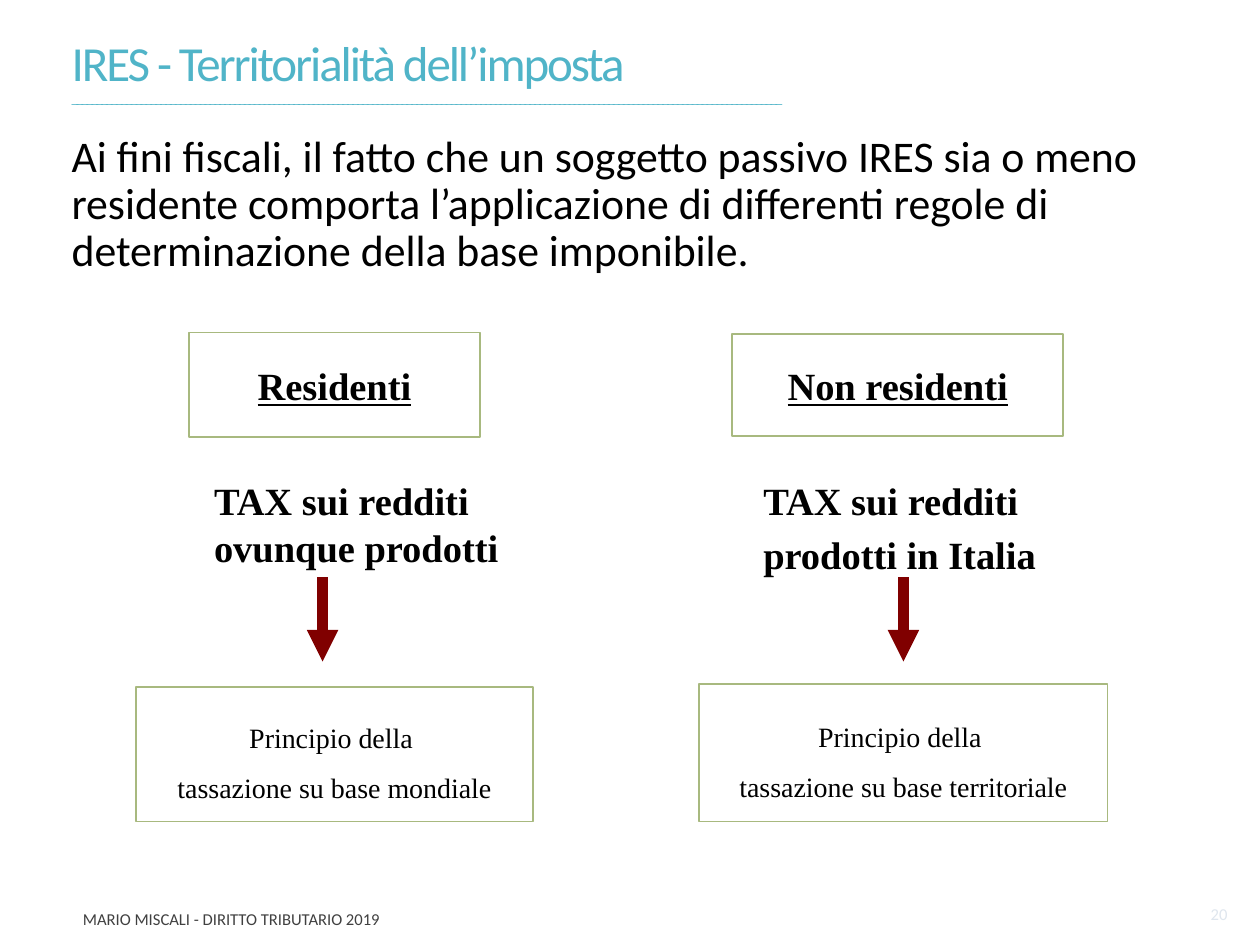
"""Build the slide on the territorial scope of the IRES tax."""
from dataclasses import dataclass

from lxml.etree import SubElement
from pptx import Presentation
from pptx.dml.color import RGBColor
from pptx.enum.shapes import MSO_CONNECTOR, MSO_SHAPE
from pptx.enum.text import MSO_ANCHOR, PP_ALIGN
from pptx.oxml.ns import qn
from pptx.slide import Slide
from pptx.text.text import TextFrame
from pptx.util import Inches, Pt


@dataclass(frozen=True)
class Theme:
    sans: str = "Calibri"
    serif: str = "Times New Roman"
    ink: str = "000000"
    accent: str = "50B4C8"
    paper: str = "FFFFFF"
    border: str = "A8B97F"
    arrow: str = "800000"
    footer: str = "404040"
    page: str = "DFE6EE"
    title_size: float = 28
    rule_size: float = 8
    body_size: float = 25
    heading_size: float = 22
    principle_size: float = 16
    footer_size: float = 9.5


@dataclass(frozen=True)
class Area:
    left: float
    top: float
    width: float
    height: float

    def emu(self) -> tuple:
        return tuple(map(Inches, (self.left, self.top, self.width, self.height)))


@dataclass(frozen=True)
class Style:
    font: str
    size: float
    color: str
    bold: bool = False
    underline: bool = False
    tracking: int = 0
    align: PP_ALIGN = PP_ALIGN.LEFT
    line_spacing: float = 1.0
    space_before: float = 0


@dataclass(frozen=True)
class Regime:
    name: str
    name_area: Area
    tax_lines: tuple
    tax_area: Area
    arrow_x: float
    principle: str
    principle_area: Area


THEME = Theme()
TITLE = Style(THEME.sans, THEME.title_size, THEME.accent, tracking=-120, line_spacing=0.9)
RULE = Style(THEME.sans, THEME.rule_size, THEME.accent, tracking=-120, line_spacing=0.9)
BODY = Style(THEME.sans, THEME.body_size, THEME.ink, line_spacing=0.9, space_before=5)
NAME = Style(THEME.serif, THEME.heading_size, THEME.ink, True, True, align=PP_ALIGN.CENTER)
TAX = Style(THEME.serif, THEME.heading_size, THEME.ink, True, space_before=4.4)
PRINCIPLE = Style(THEME.serif, THEME.principle_size, THEME.ink,
                  align=PP_ALIGN.CENTER, line_spacing=1.5)
FOOTER = Style(THEME.sans, THEME.footer_size, THEME.footer)
PAGE = Style(THEME.sans, THEME.footer_size, THEME.page, align=PP_ALIGN.RIGHT)

REGIMES = (
    Regime("Residenti", Area(1.5, 2.64, 2.31, 0.83),
           ("TAX sui redditi ovunque prodotti",), Area(1.6, 3.74, 2.49, 0.62), 2.56,
           "tassazione su base mondiale", Area(1.08, 5.45, 3.15, 1.07)),
    Regime("Non residenti", Area(5.81, 2.65, 2.63, 0.81),
           ("TAX sui redditi ", "prodotti in Italia"), Area(5.96, 3.74, 2.47, 0.91), 7.17,
           "tassazione su base territoriale", Area(5.55, 5.43, 3.24, 1.09)),
)


def add_run(paragraph, text: str, style: Style) -> None:
    run = paragraph.add_run()
    run.text = text
    run.font.name = style.font
    run.font.size = Pt(style.size)
    run.font.bold = style.bold
    run.font.underline = style.underline
    run.font.color.rgb = RGBColor.from_string(style.color)
    if style.tracking:
        run.font._element.set("spc", str(style.tracking))


def write(frame: TextFrame, lines: tuple, style: Style) -> None:
    for index, line in enumerate(lines):
        paragraph = frame.add_paragraph() if index else frame.paragraphs[0]
        paragraph.alignment = style.align
        paragraph.line_spacing = style.line_spacing
        paragraph.space_before = Pt(style.space_before)
        add_run(paragraph, line, style)


def add_text(slide: Slide, area: Area, lines: tuple, style: Style,
             anchor: MSO_ANCHOR = MSO_ANCHOR.TOP) -> TextFrame:
    frame = slide.shapes.add_textbox(*area.emu()).text_frame
    frame.word_wrap = True
    frame.vertical_anchor = anchor
    write(frame, lines, style)
    return frame


def add_box(slide: Slide, area: Area, lines: tuple, style: Style) -> None:
    box = slide.shapes.add_shape(MSO_SHAPE.RECTANGLE, *area.emu())
    box.shadow.inherit = False
    box.fill.solid()
    box.fill.fore_color.rgb = RGBColor.from_string(THEME.paper)
    box.line.color.rgb = RGBColor.from_string(THEME.border)
    box.line.width = Pt(1)
    box.text_frame.word_wrap = False
    box.text_frame.vertical_anchor = MSO_ANCHOR.MIDDLE
    write(box.text_frame, lines, style)


def add_down_arrow(slide: Slide, x: float, top: float = 4.58, bottom: float = 5.25) -> None:
    arrow = slide.shapes.add_connector(
        MSO_CONNECTOR.STRAIGHT, Inches(x), Inches(top), Inches(x), Inches(bottom))
    arrow.line.color.rgb = RGBColor.from_string(THEME.arrow)
    arrow.line.width = Pt(6)
    SubElement(arrow.line._get_or_add_ln(), qn("a:tailEnd"), type="triangle")
    SubElement(arrow._element.spPr, qn("a:effectLst"))


def add_regime(slide: Slide, regime: Regime) -> None:
    add_box(slide, regime.name_area, (regime.name,), NAME)
    add_text(slide, regime.tax_area, regime.tax_lines, TAX)
    add_down_arrow(slide, regime.arrow_x)
    add_box(slide, regime.principle_area, ("Principio della ", regime.principle), PRINCIPLE)


def main() -> None:
    deck = Presentation()
    deck.slide_width, deck.slide_height = Inches(10), Inches(7.5)
    slide = deck.slides.add_slide(deck.slide_layouts[6])

    title = add_text(slide, Area(0.47, 0.26, 8.84, 1.21),
                     ("IRES - Territorialità dell’imposta",), TITLE)
    title.paragraphs[0].add_line_break()
    add_run(title.paragraphs[0], "_" * 144, RULE)
    add_text(slide, Area(0.47, 1.02, 9, 1.5),
             ("Ai fini fiscali, il fatto che un soggetto passivo IRES sia o meno residente "
              "comporta l’applicazione di differenti regole di determinazione della base "
              "imponibile.",), BODY)
    for regime in REGIMES:
        add_regime(slide, regime)
    add_text(slide, Area(0.56, 7.17, 4.12, 0.25),
             ("MARIO MISCALI - DIRITTO TRIBUTARIO 2019",), FOOTER, MSO_ANCHOR.MIDDLE)
    add_text(slide, Area(9.24, 7.13, 0.6, 0.25), ("20",), PAGE, MSO_ANCHOR.MIDDLE)
    deck.save("out.pptx")


if __name__ == "__main__":
    main()
